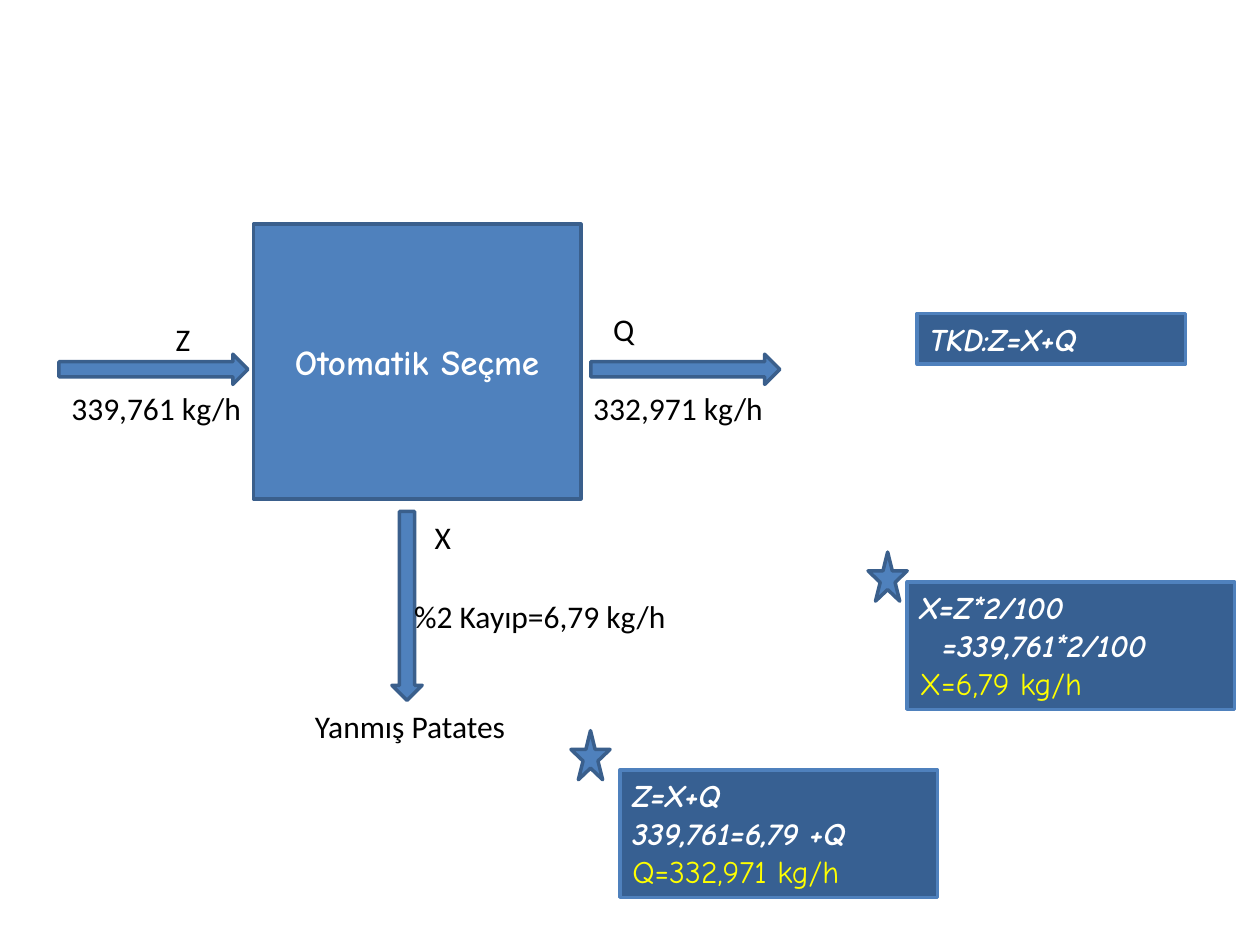
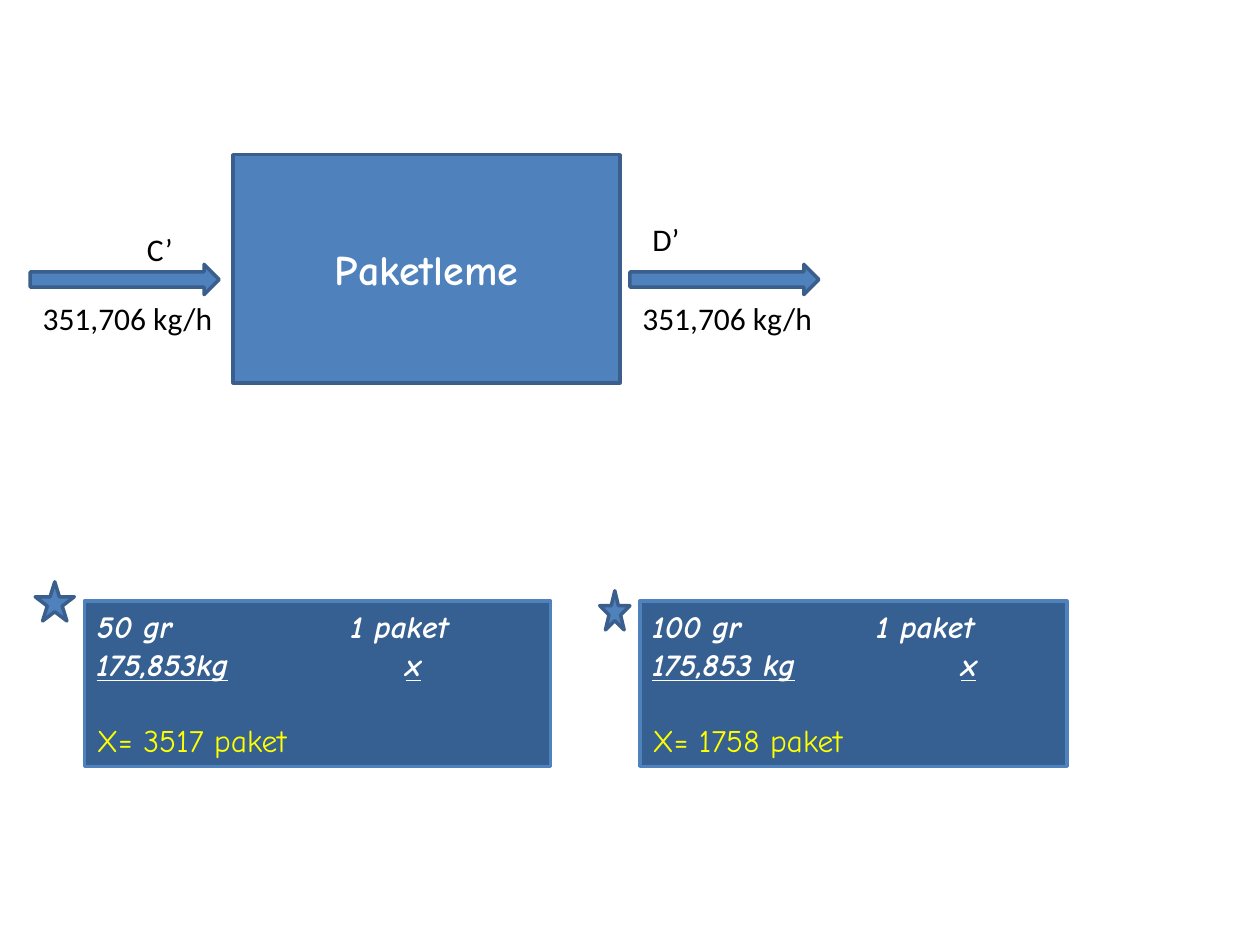
from dataclasses import dataclass

from lxml.etree import SubElement
from pptx import Presentation
from pptx.dml.color import RGBColor
from pptx.enum.shapes import MSO_SHAPE as Shape
from pptx.enum.text import MSO_ANCHOR as Anchor, MSO_AUTO_SIZE as AutoSize, PP_ALIGN as Align
from pptx.oxml.ns import qn
from pptx.util import Cm, Pt

BLUE, EDGE, DARK = "4F81BD", "3A5F8C", "376092"
WHITE, BLACK, YELLOW = "FFFFFF", "000000", "FFFF00"
BODY_FONT, NOTE_FONT = "Calibri", "Comic Neue"
LINE_H = 1.02
ARROW_W, ARROW_H = 3.81, 0.61
VALUE_DY = 0.58
BLANK_LAYOUT = 6


@dataclass(frozen=True)
class Box:
    x: float
    y: float
    w: float
    h: float = LINE_H


@dataclass(frozen=True)
class Label:
    box: Box
    text: str


@dataclass(frozen=True)
class Stream:
    x: float
    y: float
    symbol: str
    value: str
    value_w: float
    outgoing: bool = False
    value_dx: float = 0


@dataclass(frozen=True)
class Line:
    text: str
    result: bool = False
    underline: bool = False
    tab: float = 0
    indent: float = 0
    before: float = 0


@dataclass(frozen=True)
class Note:
    box: Box
    lines: tuple[Line, ...]
    star: Box | None = None


@dataclass(frozen=True)
class Page:
    process: Label
    size: int
    streams: tuple[Stream, ...]
    notes: tuple[Note, ...]
    loss_arrow: Box | None = None
    labels: tuple[Label, ...] = ()


def rgb(color: str) -> RGBColor:
    return RGBColor.from_string(color)


def place(box: Box) -> tuple:
    return Cm(box.x), Cm(box.y), Cm(box.w), Cm(box.h)


def write(p, text: str, size=18, font=BODY_FONT, color=BLACK, bold=False, italic=False,
          underline=False, align=Align.LEFT, tab=0.0, indent=0.0, before=0.0) -> None:
    p.alignment = align
    p.space_before = Pt(before)
    pPr = p._p.get_or_add_pPr()
    if indent:
        pPr.set("marL", str(Cm(indent)))
    if tab:
        tabs = SubElement(pPr, qn("a:tabLst"))
        SubElement(tabs, qn("a:tab"), pos=str(Cm(tab)), algn="l")
    r = p.add_run()
    r.text = text
    f = r.font
    f.size, f.name, f.color.rgb = Pt(size), font, rgb(color)
    f.bold, f.italic, f.underline = bold, italic, underline


def add_figure(slide, kind: Shape, box: Box, fill=BLUE, line=EDGE):
    sp = slide.shapes.add_shape(kind, *place(box))
    sp.shadow.inherit = False
    sp.fill.solid()
    sp.fill.fore_color.rgb = rgb(fill)
    sp.line.color.rgb = rgb(line)
    sp.line.width = Pt(2)
    return sp


def add_label(slide, label: Label) -> None:
    tf = slide.shapes.add_textbox(*place(label.box)).text_frame
    tf.word_wrap = True
    tf.auto_size = AutoSize.SHAPE_TO_FIT_TEXT
    write(tf.paragraphs[0], label.text)


def add_stream(slide, s: Stream) -> None:
    add_figure(slide, Shape.RIGHT_ARROW, Box(s.x, s.y, ARROW_W, ARROW_H))
    dx, dy = (0.2, -1.02) if s.outgoing else (2.1, -0.81)
    add_label(slide, Label(Box(s.x + dx, s.y + dy, 2.6), s.symbol))
    add_label(slide, Label(Box(s.x + s.value_dx, s.y + VALUE_DY, s.value_w), s.value))


def add_note(slide, note: Note) -> None:
    tf = add_figure(slide, Shape.RECTANGLE, note.box, fill=DARK, line=BLUE).text_frame
    tf.word_wrap = True
    tf.vertical_anchor = Anchor.TOP
    tf.auto_size = AutoSize.SHAPE_TO_FIT_TEXT
    for i, line in enumerate(note.lines):
        p = tf.add_paragraph() if i else tf.paragraphs[0]
        write(p, line.text, font=NOTE_FONT, color=YELLOW if line.result else WHITE,
              bold=not line.result, italic=not line.result, underline=line.underline,
              tab=line.tab, indent=line.indent, before=line.before)
    if note.star:
        add_figure(slide, Shape.STAR_5_POINT, note.star)


def add_page(prs, page: Page) -> None:
    slide = prs.slides.add_slide(prs.slide_layouts[BLANK_LAYOUT])
    tf = add_figure(slide, Shape.RECTANGLE, page.process.box).text_frame
    tf.word_wrap = True
    tf.vertical_anchor = Anchor.MIDDLE
    write(tf.paragraphs[0], page.process.text, size=page.size, font=NOTE_FONT,
          color=WHITE, bold=True, align=Align.CENTER)
    for stream in page.streams:
        add_stream(slide, stream)
    if page.loss_arrow:
        add_figure(slide, Shape.RIGHT_ARROW, page.loss_arrow).rotation = 90
    for label in page.labels:
        add_label(slide, label)
    for note in page.notes:
        add_note(slide, note)


def packet_note(box: Box, star: Box, weight: str, total: str, count: str, tab: float) -> Note:
    return Note(box, (
        Line(f"{weight}\t1 paket", tab=tab),
        Line(f"{total}\tx", underline=True, tab=6.23),
        Line(f"X= {count} paket", result=True, before=21.7),
    ), star)


SORTING = Page(
    process=Label(Box(5.11, 4.52, 6.6, 5.54), "Otomatik Seçme"),
    size=20,
    streams=(
        Stream(1.19, 7.14, "Z", "339,761 kg/h", 7.39),
        Stream(11.91, 7.14, "Q", "332,971 kg/h", 7.39, outgoing=True, value_dx=-0.2),
    ),
    loss_arrow=Box(6.3, 11.91, ARROW_W, ARROW_H),
    labels=(
        Label(Box(8.51, 10.31, 2.6), "X"),
        Label(Box(8.1, 11.91, 6.6), "%2 Kayıp=6,79 kg/h"),
        Label(Box(6.1, 14.12, 5.21), "Yanmış Patates"),
    ),
    notes=(
        Note(Box(18.49, 6.32, 5.41), (Line("TKD:Z=X+Q"),)),
        Note(Box(18.29, 11.73, 6.6, 2.57), (
            Line("X=Z*2/100"),
            Line("=339,761*2/100", indent=0.46),
            Line("X=6,79 kg/h", result=True),
        ), Box(17.5, 11.13, 0.79, 0.99)),
        Note(Box(12.5, 15.52, 6.4, 2.57), (
            Line("Z=X+Q"),
            Line("339,761=6,79 +Q"),
            Line("Q=332,971 kg/h", result=True),
        ), Box(11.51, 14.73, 0.79, 0.99)),
    ),
)

PACKING = Page(
    process=Label(Box(4.7, 3.12, 7.8, 4.6), "Paketleme"),
    size=24,
    streams=(
        Stream(0.61, 5.33, "C’", "351,706 kg/h", 5.79),
        Stream(12.7, 5.33, "D’", "351,706 kg/h", 5.79, outgoing=True),
    ),
    notes=(
        packet_note(Box(1.7, 12.12, 9.4, 3.33), Box(0.71, 11.73, 0.79, 0.79),
                    "50 gr", "175,853kg", "3517", 5.12),
        packet_note(Box(12.9, 12.12, 8.61, 3.33), Box(12.09, 11.91, 0.61, 0.79),
                    "100 gr", "175,853 kg", "1758", 4.52),
    ),
)


def main() -> None:
    prs = Presentation()
    prs.slide_width, prs.slide_height = Cm(25.4), Cm(19.05)
    for page in (SORTING, PACKING):
        add_page(prs, page)
    prs.save("out.pptx")


if __name__ == "__main__":
    main()
